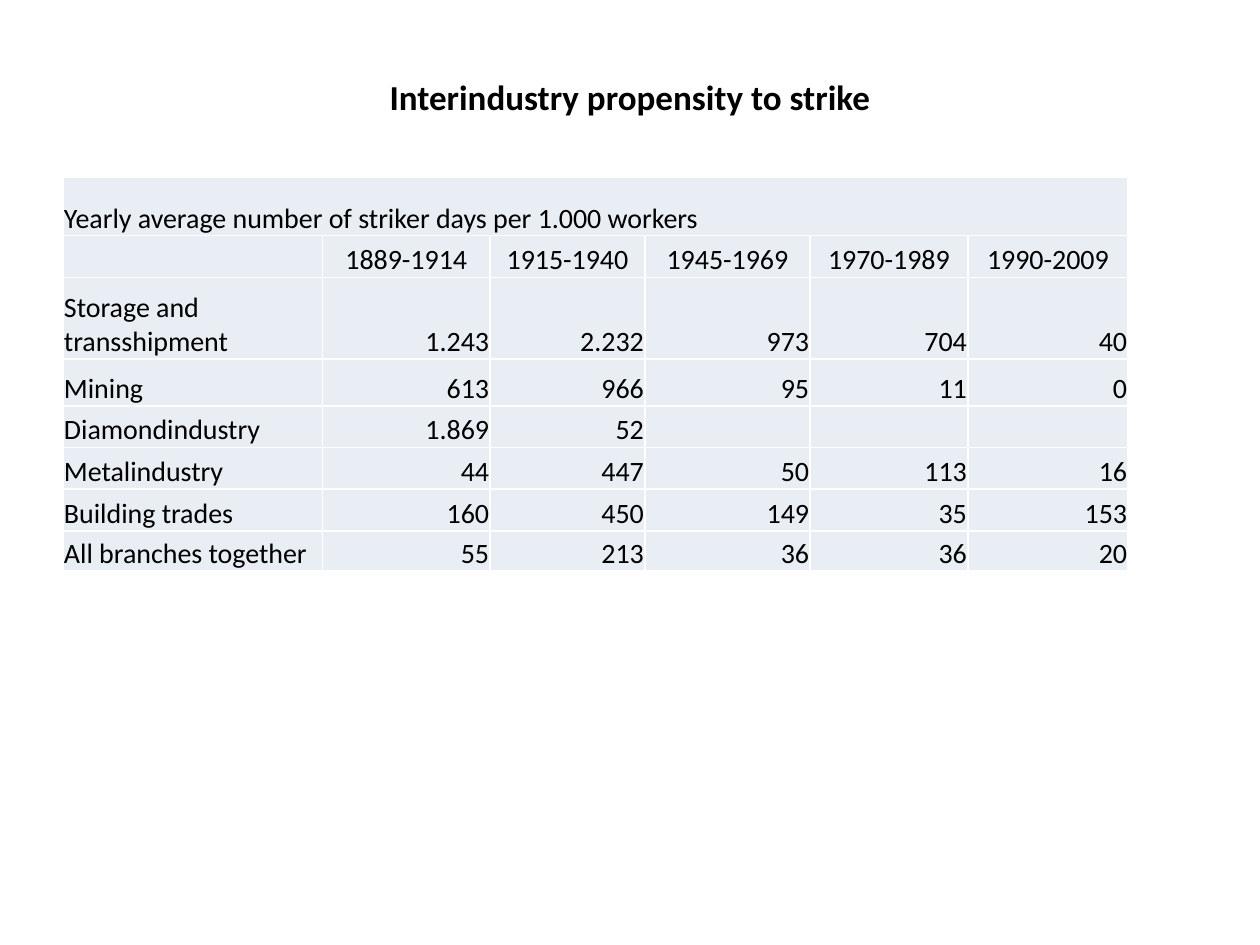
from typing import NamedTuple

from lxml import etree
from pptx import Presentation
from pptx.dml.color import RGBColor
from pptx.enum.text import MSO_ANCHOR, PP_ALIGN
from pptx.oxml.ns import qn
from pptx.util import Cm, Pt

LEFT, CENTER, RIGHT = PP_ALIGN.LEFT, PP_ALIGN.CENTER, PP_ALIGN.RIGHT
MIDDLE, BOTTOM = MSO_ANCHOR.MIDDLE, MSO_ANCHOR.BOTTOM

FONT = "Calibri"
COLORS = {"text": "000000", "cell": "E9EDF4", "border": "FFFFFF"}
TITLE = "Interindustry propensity to strike"
CAPTION = "Yearly average number of striker days per 1.000 workers"
PERIODS = ("1889-1914", "1915-1940", "1945-1969", "1970-1989", "1990-2009")
COLUMN_WIDTHS = (5.23, 3.38, 3.12, 3.33, 3.18, 3.23)
CAPTION_HEIGHT, PERIODS_HEIGHT = 1.17, 0.84


class Industry(NamedTuple):
    name: str
    days: tuple[str, ...]
    height: float = 0.84


INDUSTRIES = (
    Industry("Storage and transshipment", ("1.243", "2.232", "973", "704", "40"), 1.65),
    Industry("Mining", ("613", "966", "95", "11", "0"), 0.94),
    Industry("Diamondindustry", ("1.869", "52", "", "", "")),
    Industry("Metalindustry", ("44", "447", "50", "113", "16")),
    Industry("Building trades", ("160", "450", "149", "35", "153")),
    Industry("All branches together", ("55", "213", "36", "36", "20"), 0.81),
)


def format_paragraph(p, size: int, align: PP_ALIGN, bold: bool = False) -> None:
    p.alignment = align
    for r in p.runs:
        r.font.name = FONT
        r.font.size = Pt(size)
        r.font.bold = bold
        r.font.color.rgb = RGBColor.from_string(COLORS["text"])


def add_borders(cell) -> None:
    tc_pr = cell._tc.get_or_add_tcPr()
    for side in ("lnL", "lnR", "lnT", "lnB"):
        line = etree.SubElement(tc_pr, qn(f"a:{side}"), w=str(Pt(1)))
        fill = etree.SubElement(line, qn("a:solidFill"))
        etree.SubElement(fill, qn("a:srgbClr"), val=COLORS["border"])


def fill_cell(cell, text: str, align: PP_ALIGN) -> None:
    add_borders(cell)
    cell.fill.solid()
    cell.fill.fore_color.rgb = RGBColor.from_string(COLORS["cell"])
    cell.margin_left = cell.margin_right = cell.margin_top = Cm(0.02)
    cell.margin_bottom = 0
    cell.vertical_anchor = BOTTOM
    cell.text = text
    format_paragraph(cell.text_frame.paragraphs[0], 16, align)


def add_title(slide) -> None:
    title = slide.shapes.title
    title.left, title.top, title.width, title.height = Cm(1.27), Cm(0.76), Cm(22.86), Cm(2.36)
    tf = title.text_frame
    tf.text = TITLE
    tf.vertical_anchor = MIDDLE
    format_paragraph(tf.paragraphs[0], 20, CENTER, bold=True)


def add_strike_table(slide) -> None:
    rows = [(CAPTION, *[""] * len(PERIODS)), ("", *PERIODS)]
    rows += [(industry.name, *industry.days) for industry in INDUSTRIES]
    heights = [CAPTION_HEIGHT, PERIODS_HEIGHT] + [industry.height for industry in INDUSTRIES]
    table = slide.shapes.add_table(
        len(rows), len(COLUMN_WIDTHS), Cm(1.27), Cm(3.58),
        Cm(sum(COLUMN_WIDTHS)), Cm(sum(heights)),
    ).table
    for column, width in zip(table.columns, COLUMN_WIDTHS):
        column.width = Cm(width)
    for row, height in zip(table.rows, heights):
        row.height = Cm(height)
    for i, texts in enumerate(rows):
        for j, text in enumerate(texts):
            align = LEFT if j == 0 else CENTER if i == 1 else RIGHT
            fill_cell(table.cell(i, j), text, align)
    table.cell(0, 0).merge(table.cell(0, len(PERIODS)))


def main() -> None:
    prs = Presentation()
    prs.slide_width, prs.slide_height = Cm(25.4), Cm(19.05)
    slide = prs.slides.add_slide(prs.slide_layouts[5])
    add_title(slide)
    add_strike_table(slide)
    prs.save("out.pptx")


if __name__ == "__main__":
    main()
